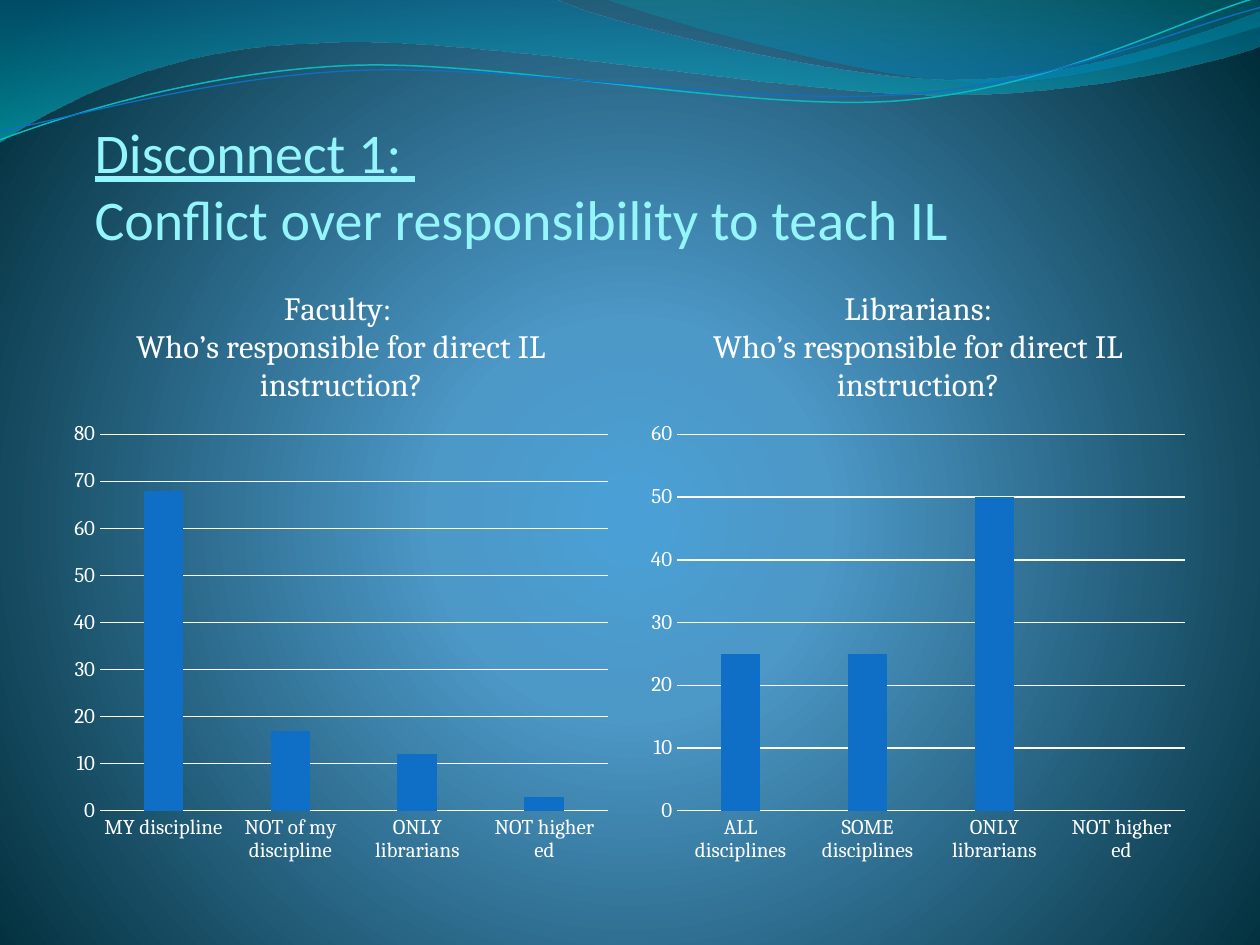
"""Build the slide on the conflict over who teaches information literacy."""
from math import cos, radians, sin

from lxml.etree import SubElement
from pptx import Presentation
from pptx.chart.data import CategoryChartData
from pptx.dml.color import RGBColor
from pptx.enum.chart import XL_CHART_TYPE, XL_TICK_MARK
from pptx.enum.text import MSO_ANCHOR, PP_ALIGN
from pptx.oxml import parse_xml
from pptx.oxml.ns import nsdecls, qn
from pptx.util import Inches, Pt

COLORS = {"title": "94F5FA", "text": "FFFFFF", "bar": "0F6FC6", "teal": "0AB8BF"}
BACKGROUND = [(0, "4AA0D6", 100), (25, "4C98C7", 100), (100, "002C38", 100)]
CIRCLE = '<a:path path="circle"><a:fillToRect l="10000" t="110000" r="10000" b="100000"/></a:path>'
DOWN = '<a:lin ang="5400000" scaled="1"/>'

TITLE = ("Disconnect 1: ", "Conflict over responsibility to teach IL")
QUESTION = "Who’s responsible for direct IL instruction?"
CHARTS = [
    ("Faculty: ", [("MY discipline", 68), ("NOT of my discipline", 17),
                   ("ONLY librarians", 12), ("NOT higher ed", 3)]),
    ("Librarians:", [("ALL disciplines", 25), ("SOME disciplines", 25),
                     ("ONLY librarians", 50), ("NOT higher ed", 0)]),
]
CHART_LEFT, CHART_TOP, CHART_W, CHART_H, CHART_GAP = 0.5, 2.1, 4.42, 4.85, 0.16
PLOT_PERCENT = {"x": 6.65, "y": 27.8, "w": 91.2, "h": 61.6}

WAVES = [
    ([(0, 0), (4.4, -0.01), (4.76, 0.17, 6.64, 0.63, 7.58, 0.63),
      (8.53, 0.63, 9.58, 0.26, 10, 0.09), (10.01, 0.36),
      (9.83, 0.44, 8.7, 0.76, 7.46, 0.75), (6.22, 0.75, 3.82, 0.28, 2.57, 0.34),
      (1.29, 0.36, 0.46, 0.83, -0.01, 1.13), (0, 0)],
     [(0, "0074A1", 45), (100, "00C6CF", 55)]),
    ([(4.79, -0.01), (5.09, 0.11, 6.82, 0.62, 7.69, 0.65),
      (8.56, 0.69, 9.61, 0.32, 10, 0.21), (10, 0), (4.79, -0.01)],
     [(0, "00A1A9", 30), (80, "008BBF", 45)]),
]
TILT = 2.7
STRANDS = [
    ([(0, 1.11), (0.48, 0.93, 1.58, 0.57, 2.77, 0.52),
      (3.95, 0.47, 5.93, 0.89, 7.13, 0.8), (8.33, 0.71, 9.38, 0.15, 9.98, -0.02)],
     (4.99, 0.58), "teal", 0.85),
    ([(0, 1.04), (0.47, 0.96, 1.64, 0.61, 2.83, 0.56),
      (4.03, 0.51, 5.97, 0.84, 7.17, 0.75), (8.36, 0.67, 9.41, 0.21, 10, 0.06)],
     (5, 0.59), "bar", 0.75),
]


def rgb(name):
    return RGBColor.from_string(COLORS[name])


def style(font, size, color, name):
    font.size, font.name, font.bold = Pt(size), name, False
    font.color.rgb = rgb(color)


def paint_gradient(parent, stops, direction):
    gs = "".join(f'<a:gs pos="{pos * 1000}"><a:srgbClr val="{color}">'
                 f'<a:alpha val="{alpha * 1000}"/></a:srgbClr></a:gs>'
                 for pos, color, alpha in stops)
    fill = parse_xml(f'<a:gradFill {nsdecls("a")} rotWithShape="1">'
                     f'<a:gsLst>{gs}</a:gsLst>{direction}</a:gradFill>')
    parent.replace(parent.find(qn("a:noFill")), fill)


def pairs(seg):
    return list(zip(seg[::2], seg[1::2]))


def level(segments, center):
    cx, cy = center
    c, n = cos(radians(TILT)), sin(radians(TILT))
    return [[v for x, y in pairs(seg)
             for v in (cx + (x - cx) * c - (y - cy) * n, cy + (x - cx) * n + (y - cy) * c)]
            for seg in segments]


def add_curve(s, segments, close=False):
    ends = [(Inches(seg[-2]), Inches(seg[-1])) for seg in segments]
    builder = s.shapes.build_freeform(*ends[0])
    builder.add_line_segments(ends[1:], close=close)
    sp = builder.convert_to_shape()
    sp.shadow.inherit = False
    sp.fill.background()
    for line, seg in zip(list(sp.element.iter(qn("a:lnTo"))), segments[1:]):
        if len(seg) == 6:
            bezier = line.makeelement(qn("a:cubicBezTo"))
            line.getparent().replace(line, bezier)
            for x, y in pairs(seg):
                SubElement(bezier, qn("a:pt"), x=str(Inches(x) - sp.left),
                           y=str(Inches(y) - sp.top))
    return sp


def add_title(s):
    title = s.shapes.title
    title.element.getparent().append(title.element)
    title.left, title.top, title.width, title.height = map(Inches, (0.75, 0.75, 9, 1.25))
    tf = title.text_frame
    tf.vertical_anchor, tf.word_wrap = MSO_ANCHOR.BOTTOM, True
    tf.margin_left = tf.margin_right = tf.margin_bottom = 0
    p = tf.paragraphs[0]
    p.alignment = PP_ALIGN.LEFT
    style(p.font, 32, "title", "Calibri")
    r = p.add_run()
    r.text, r.font.underline = TITLE[0], True
    p.add_line_break()
    p.add_run().text = TITLE[1]


def add_column_chart(s, left, group, answers):
    data = CategoryChartData()
    data.categories = [answer for answer, _ in answers]
    data.add_series("Series 1", [value for _, value in answers])
    chart = s.shapes.add_chart(XL_CHART_TYPE.COLUMN_CLUSTERED, Inches(left), Inches(CHART_TOP),
                               Inches(CHART_W), Inches(CHART_H), data).chart
    chart.has_legend = False
    style(chart.font, 10, "text", "Cambria")

    chart.has_title = True
    chart.chart_title.include_in_layout = False
    tf = chart.chart_title.text_frame
    for i, line in enumerate((group, QUESTION)):
        p = tf.paragraphs[0] if i == 0 else tf.add_paragraph()
        p.text = line
        style(p.font, 18.6, "text", "Cambria")

    plot = chart.plots[0]
    plot.gap_width, plot.overlap, plot.vary_by_categories = 219, -27, False
    fill = plot.series[0].format.fill
    fill.solid()
    fill.fore_color.rgb = rgb("bar")

    for axis in (chart.category_axis, chart.value_axis):
        axis.major_tick_mark = axis.minor_tick_mark = XL_TICK_MARK.NONE
        style(axis.tick_labels.font, 12, "text", "Cambria")
    chart.value_axis.format.line.fill.background()
    for line in (chart.category_axis.format.line, chart.value_axis.major_gridlines.format.line):
        line.color.rgb, line.width = rgb("text"), Pt(0.75)

    area = chart.element.find(".//" + qn("c:plotArea"))
    for old in area.findall(qn("c:layout")):
        area.remove(old)
    modes = '<c:xMode val="edge"/><c:yMode val="edge"/>'
    sizes = "".join(f'<c:{key} val="{share / 100}"/>' for key, share in PLOT_PERCENT.items())
    area.insert(0, parse_xml(f'<c:layout {nsdecls("c")}><c:manualLayout>'
                             f'<c:layoutTarget val="inner"/>{modes}{sizes}'
                             '</c:manualLayout></c:layout>'))


def main():
    prs = Presentation()
    prs.slide_width, prs.slide_height = Inches(10), Inches(7.5)
    s = prs.slides.add_slide(prs.slide_layouts[5])
    s.background.fill.background()
    paint_gradient(s.element.find(".//" + qn("p:bgPr")), BACKGROUND, CIRCLE)
    for segments, stops in WAVES:
        sp = add_curve(s, segments, close=True)
        sp.line.fill.background()
        paint_gradient(sp.element.spPr, stops, DOWN)
    for segments, center, color, width in STRANDS:
        sp = add_curve(s, level(segments, center))
        sp.rotation = -TILT
        sp.line.color.rgb, sp.line.width = rgb(color), Pt(width)
    add_title(s)
    for i, (group, answers) in enumerate(CHARTS):
        add_column_chart(s, CHART_LEFT + i * (CHART_W + CHART_GAP), group, answers)
    prs.save("out.pptx")


if __name__ == "__main__":
    main()
